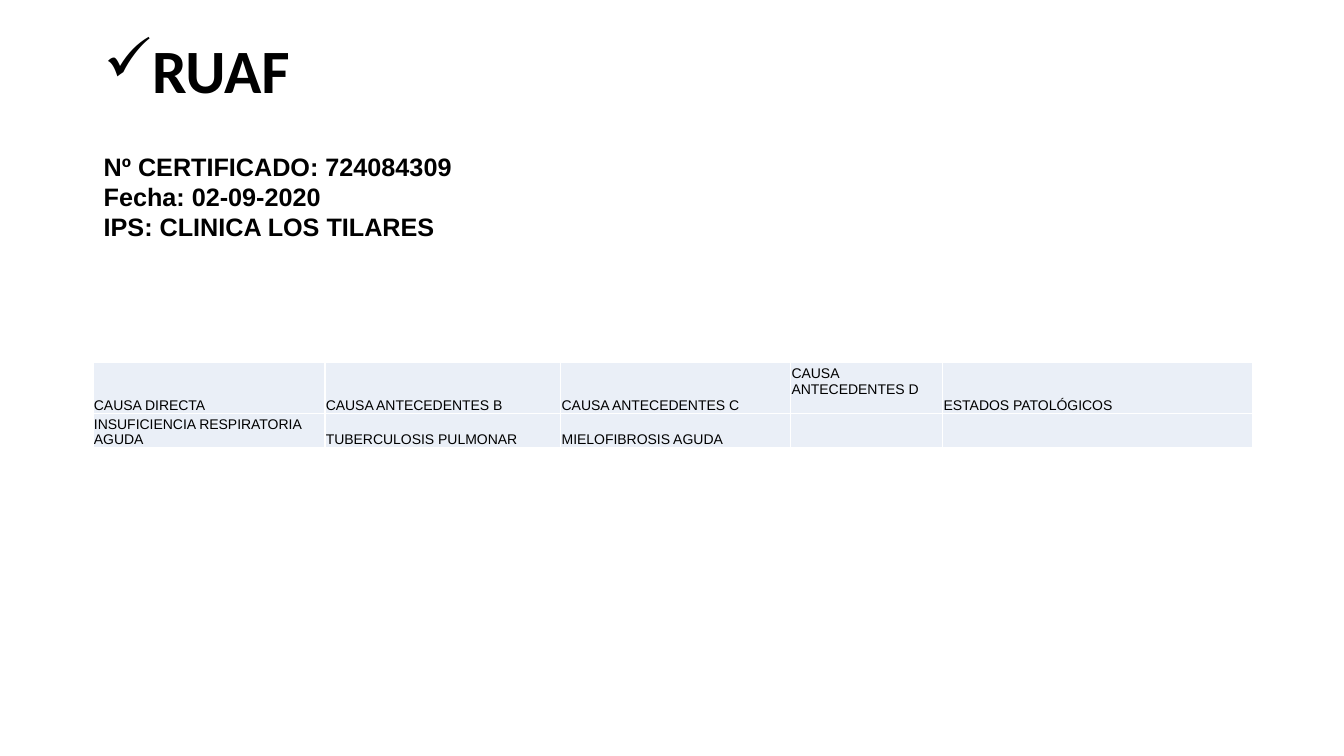
from lxml.etree import SubElement
from pptx import Presentation
from pptx.dml.color import RGBColor
from pptx.enum.text import MSO_ANCHOR as Anchor
from pptx.oxml.ns import qn
from pptx.util import Pt

TITLE = "RUAF"
CERTIFICATE = [
    "Nº CERTIFICADO: 724084309",
    "Fecha: 02-09-2020",
    "IPS: CLINICA LOS TILARES",
]
CAUSES = [
    ("CAUSA DIRECTA", "CAUSA ANTECEDENTES B", "CAUSA ANTECEDENTES C",
     "CAUSA ANTECEDENTES D", "ESTADOS PATOLÓGICOS"),
    ("INSUFICIENCIA RESPIRATORIA AGUDA", "TUBERCULOSIS PULMONAR",
     "MIELOFIBROSIS AGUDA", "", ""),
]
COLUMN_WIDTHS = [165.6, 168.5, 164.2, 108.7, 221]
ROW_HEIGHTS = [36, 24.5]
RAISED_CELL = (0, 3)
BLACK, WHITE, PALE = "000000", "FFFFFF", "EAEFF7"
LEFT = 67


def color(value):
    return RGBColor.from_string(value)


def set_font(para, name, size, bold=False):
    para.font.name = name
    para.font.size = Pt(size)
    para.font.bold = bold
    para.font.color.rgb = color(BLACK)


def add_text(page, lines, top, width, height, name, size):
    box = page.shapes.add_textbox(Pt(LEFT), Pt(top), Pt(width), Pt(height))
    frame = box.text_frame
    frame.word_wrap = True
    frame.text = "\n".join(lines)
    for para in frame.paragraphs:
        set_font(para, name, size, True)
    return frame


def add_check(para, indent):
    props = para._p.get_or_add_pPr()
    props.set("marL", str(Pt(indent)))
    props.set("indent", str(-Pt(indent)))
    bullet = props.makeelement(qn("a:buChar"), {"char": "✓"})
    props.find(qn("a:defRPr")).addprevious(bullet)


def set_borders(cell):
    props = cell._tc.get_or_add_tcPr()
    for index, side in enumerate(("lnL", "lnR", "lnT", "lnB")):
        line = props.makeelement(qn(f"a:{side}"), {"w": str(Pt(1))})
        fill = SubElement(line, qn("a:solidFill"))
        SubElement(fill, qn("a:srgbClr"), val=WHITE)
        props.insert(index, line)


def add_causes(page, top):
    frame = page.shapes.add_table(
        len(CAUSES), len(COLUMN_WIDTHS), Pt(LEFT - 0.5), Pt(top),
        Pt(sum(COLUMN_WIDTHS)), Pt(sum(ROW_HEIGHTS)))
    table = frame.table
    for column, width in zip(table.columns, COLUMN_WIDTHS):
        column.width = Pt(width)
    for row, height in zip(table.rows, ROW_HEIGHTS):
        row.height = Pt(height)
    for r, texts in enumerate(CAUSES):
        for c, text in enumerate(texts):
            cell = table.cell(r, c)
            cell.text = text
            cell.vertical_anchor = Anchor.BOTTOM
            cell.margin_left = cell.margin_right = cell.margin_top = Pt(0.6)
            cell.margin_bottom = Pt(11.5 if (r, c) == RAISED_CELL else 0)
            cell.fill.solid()
            cell.fill.fore_color.rgb = color(PALE)
            set_borders(cell)
            set_font(cell.text_frame.paragraphs[0], "Arial", 10)


def main():
    deck = Presentation()
    deck.slide_width, deck.slide_height = Pt(960), Pt(540)
    page = deck.slides.add_slide(deck.slide_layouts[6])
    title = add_text(page, [TITLE], 0, 828, 104.4, "Calibri", 44)
    title.vertical_anchor = Anchor.MIDDLE
    title.paragraphs[0].line_spacing = 0.9
    add_check(title.paragraphs[0], 22.5)
    add_text(page, CERTIFICATE, 104.4, 684, 72.7, "Arial", 18)
    add_causes(page, 259.2)
    deck.save("out.pptx")


if __name__ == "__main__":
    main()
